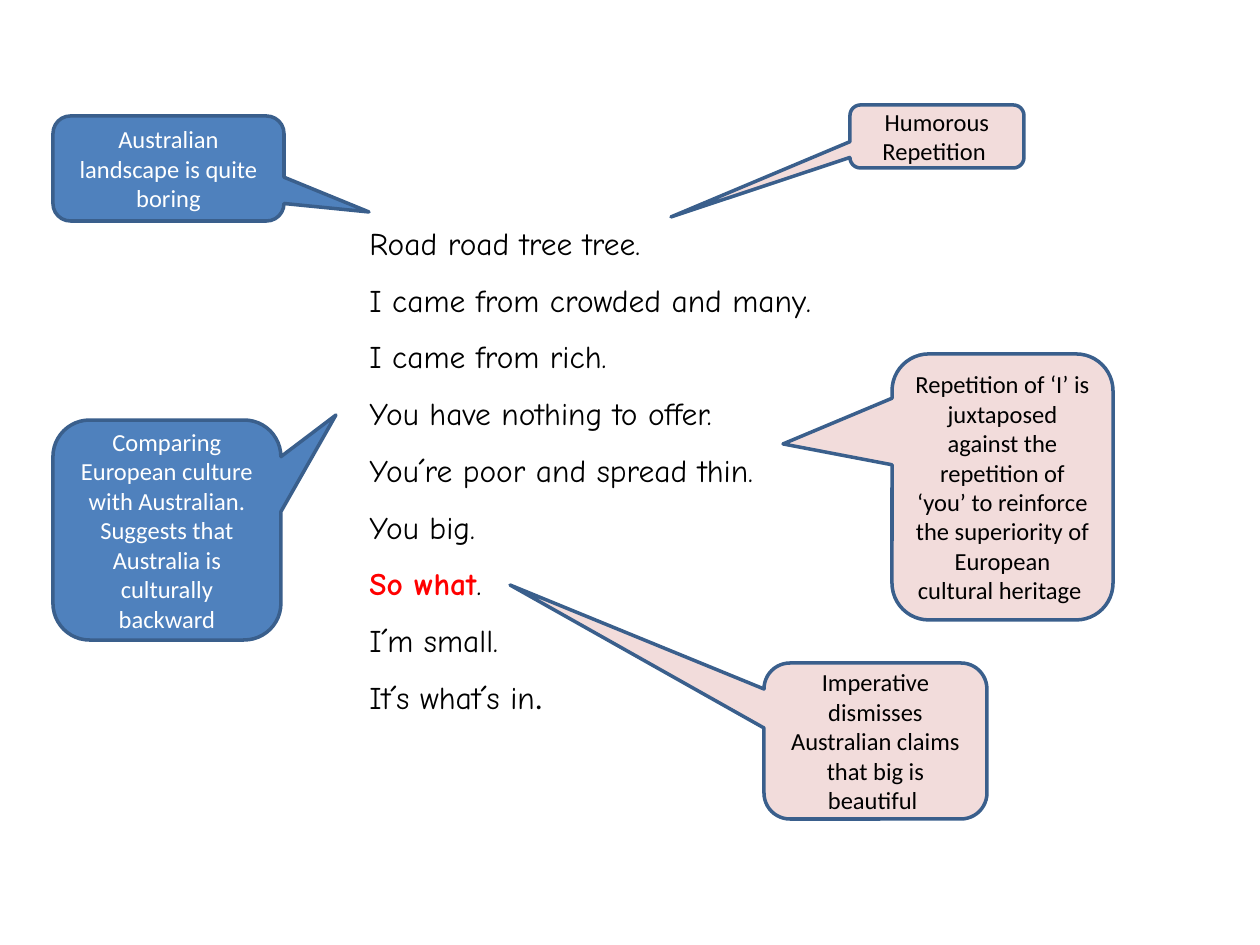
from pptx import Presentation
from pptx.dml.color import RGBColor
from pptx.enum.shapes import MSO_SHAPE
from pptx.enum.text import MSO_ANCHOR, MSO_AUTO_SIZE, PP_ALIGN
from pptx.util import Emu, Pt

CALLOUT = MSO_SHAPE.ROUNDED_RECTANGULAR_CALLOUT
MIDDLE = MSO_ANCHOR.MIDDLE
FIT_SHAPE = MSO_AUTO_SIZE.SHAPE_TO_FIT_TEXT
CENTER = PP_ALIGN.CENTER
EMU_PER_PX = 914400 / 126

BLACK, WHITE, RED = "000000", "FFFFFF", "FF0000"
BLUE, PINK, OUTLINE = "4F81BD", "F2DCDB", "3A5F8C"
BODY_FONT, POEM_FONT = "Calibri", "Comic Neue"

# Each line is a list of (text, format) runs.
POEM = [
    [("Road road tree tree.", {})],
    [("I came from crowded and many.", {})],
    [("I came from rich.", {})],
    [("You have nothing to offer.", {})],
    [("You´re poor and spread thin.", {})],
    [("You big.", {})],
    [("So what", {"color": RED, "bold": True}), (".", {})],
    [("I´m small.", {})],
    [("It´s what´s in", {}), (".", {"font": BODY_FONT})],
]

# Text, box (left, top, width, height), pointer tip, fill, text colour
NOTES = [
    ("Comparing European culture with Australian. Suggests that Australia is "
     "culturally backward", (53, 420, 228, 220), (336, 415), BLUE, WHITE),
    ("Australian landscape is quite boring",
     (53, 116, 231, 105), (369, 212), BLUE, WHITE),
    ("Humorous Repetition ", (850, 105, 174, 63), (671, 217), PINK, BLACK),
    ("Repetition of ‘I’ is juxtaposed against the repetition of ‘you’ to "
     "reinforce the superiority of European cultural heritage ",
     (892, 354, 221, 266), (783, 444), PINK, BLACK),
    ("Imperative dismisses Australian claims that big is beautiful ",
     (764, 663, 223, 156), (510, 585), PINK, BLACK),
]


def px(n):
    return Emu(round(n * EMU_PER_PX))


def rgb(color):
    return RGBColor.from_string(color)


def add_text(p, text, size=14, font=BODY_FONT, color=BLACK, bold=False):
    r = p.add_run()
    r.text = text
    r.font.size = Pt(size)
    r.font.name = font
    r.font.bold = bold
    r.font.color.rgb = rgb(color)


class Page:
    """Holds the slide and the outline style of its callouts."""

    def __init__(self, slide, line_color=OUTLINE, line_width=2):
        self.shapes = slide.shapes
        self.line_color = line_color
        self.line_width = line_width

    def poem(self, lines, box):
        tf = self.shapes.add_textbox(*map(px, box)).text_frame
        tf.word_wrap = True
        tf.auto_size = FIT_SHAPE
        for i, runs in enumerate(lines):
            p = tf.add_paragraph() if i else tf.paragraphs[0]
            p.line_spacing = 1.5
            for text, style in runs:
                add_text(p, text, **{"size": 18, "font": POEM_FONT, **style})

    def callout(self, text, box, tip, fill, color):
        """Add a note whose pointer ends at tip, given in slide px."""
        left, top, width, height = box
        sp = self.shapes.add_shape(CALLOUT, *map(px, box))
        sp.adjustments[0] = (tip[0] - left) / width - 0.5
        sp.adjustments[1] = (tip[1] - top) / height - 0.5
        sp.shadow.inherit = False
        sp.fill.solid()
        sp.fill.fore_color.rgb = rgb(fill)
        sp.line.color.rgb = rgb(self.line_color)
        sp.line.width = Pt(self.line_width)
        tf = sp.text_frame
        tf.word_wrap = True
        tf.vertical_anchor = MIDDLE
        p = tf.paragraphs[0]
        p.alignment = CENTER
        add_text(p, text, color=color)


def main():
    prs = Presentation()
    prs.slide_width, prs.slide_height = px(1260), px(945)
    page = Page(prs.slides.add_slide(prs.slide_layouts[6]))
    page.poem(POEM, (357, 199, 630, 528))
    for note in NOTES:
        page.callout(*note)
    prs.save("out.pptx")


if __name__ == "__main__":
    main()
